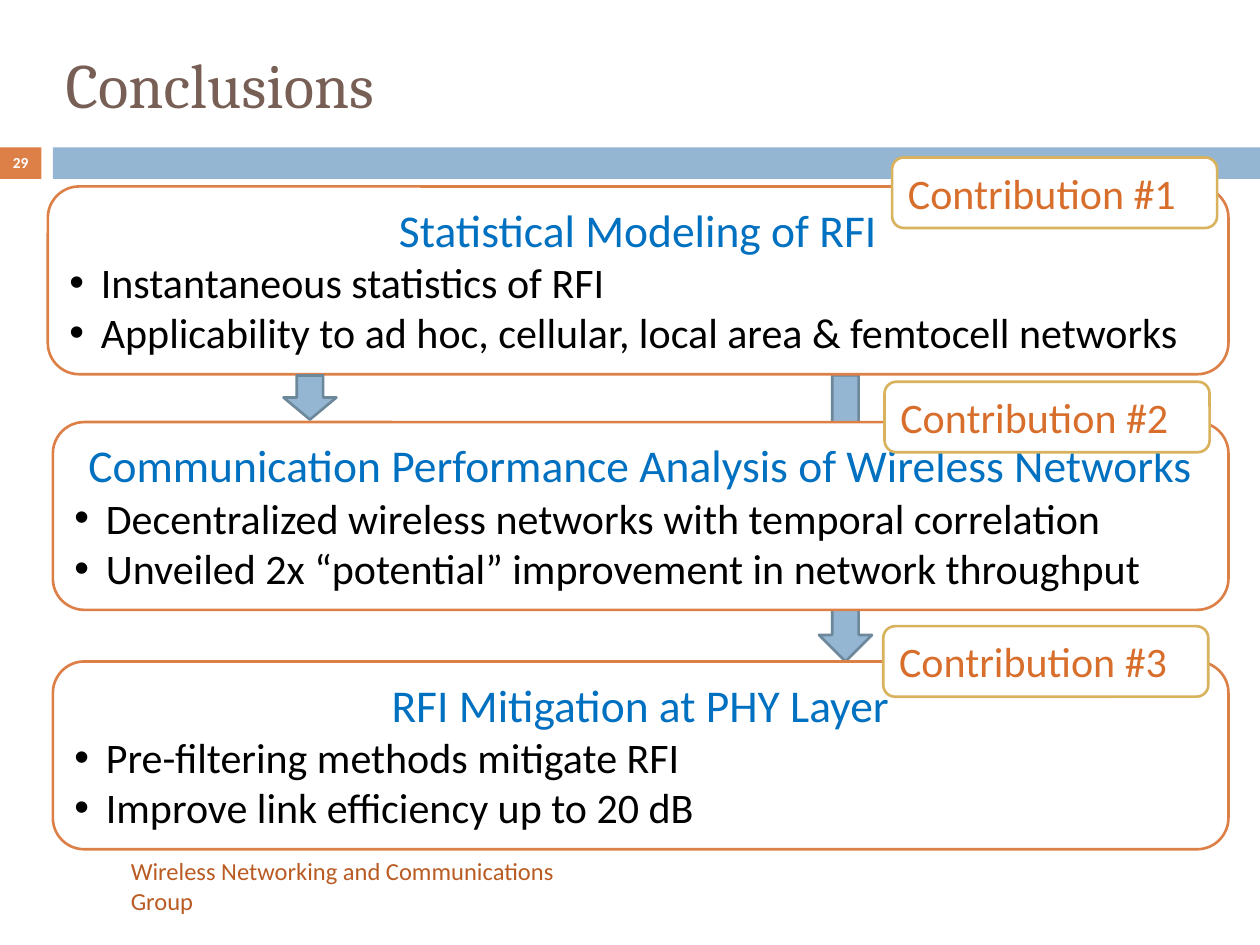
from typing import NamedTuple

from lxml.etree import SubElement
from pptx import Presentation
from pptx.dml.color import RGBColor
from pptx.enum.shapes import MSO_SHAPE
from pptx.enum.text import MSO_ANCHOR, MSO_AUTO_SIZE, PP_ALIGN
from pptx.oxml.ns import qn
from pptx.util import Pt

PX = 9144
BULLET_INDENT = 25

WHITE = RGBColor(0xFF, 0xFF, 0xFF)
BLACK = RGBColor(0x00, 0x00, 0x00)
ORANGE = RGBColor(0xDD, 0x80, 0x47)
DARK_ORANGE = RGBColor(0xB9, 0x5B, 0x22)
LABEL_ORANGE = RGBColor(0xD8, 0x6E, 0x2C)
GOLD = RGBColor(0xD8, 0xB2, 0x5C)
BLUE = RGBColor(0x94, 0xB6, 0xD2)
ARROW_EDGE = RGBColor(0x6D, 0x87, 0x9B)
HEADING_BLUE = RGBColor(0x00, 0x70, 0xC0)
BROWN = RGBColor(0x77, 0x5F, 0x55)


class Box(NamedTuple):
    left: int
    top: int
    width: int
    height: int

    def emu(self) -> list[int]:
        return [length * PX for length in self]


class Contribution(NamedTuple):
    panel: Box
    heading: str
    points: tuple[str, ...]
    label: str
    label_left: int
    label_top: int


CONTRIBUTIONS = (
    Contribution(
        Box(38, 148, 937, 149),
        "Statistical Modeling of RFI",
        (
            "Instantaneous statistics of RFI",
            "Applicability to ad hoc, cellular, local area & femtocell networks",
        ),
        "Contribution #1", 708, 125,
    ),
    Contribution(
        Box(42, 335, 933, 149),
        "Communication Performance Analysis of Wireless Networks",
        (
            "Decentralized wireless networks with temporal correlation",
            "Unveiled 2x “potential” improvement in network throughput",
        ),
        "Contribution #2", 702, 303,
    ),
    Contribution(
        Box(42, 525, 933, 149),
        "RFI Mitigation at PHY Layer",
        (
            "Pre-filtering methods mitigate RFI",
            "Improve link efficiency up to 20 dB",
        ),
        "Contribution #3", 701, 497,
    ),
)


def add_block(slide, preset: MSO_SHAPE, box: Box,
              fill: RGBColor | None = None, edge: RGBColor | None = None):
    block = slide.shapes.add_shape(preset, *box.emu())
    block.shadow.inherit = False
    if fill is None:
        block.fill.background()
    else:
        block.fill.solid()
        block.fill.fore_color.rgb = fill
    if edge is None:
        block.line.fill.background()
    else:
        block.line.color.rgb = edge
        block.line.width = Pt(1.5)
    return block


def write(paragraph, text: str, size: float, color: RGBColor,
          align: PP_ALIGN = PP_ALIGN.LEFT, face: str = "Calibri",
          bold: bool = False, bullet: bool = False) -> None:
    paragraph.text = text
    paragraph.alignment = align
    if bullet:
        properties = paragraph._p.get_or_add_pPr()
        properties.set("marL", str(BULLET_INDENT * PX))
        properties.set("indent", str(-BULLET_INDENT * PX))
        SubElement(properties, qn("a:buFont"), typeface="Arial")
        SubElement(properties, qn("a:buChar"), char="•")
    paragraph.font.name = face
    paragraph.font.size = Pt(size)
    paragraph.font.bold = bold
    paragraph.font.color.rgb = color


def add_panel(slide, contribution: Contribution) -> None:
    panel = add_block(slide, MSO_SHAPE.ROUNDED_RECTANGLE, contribution.panel, WHITE, ORANGE)
    frame = panel.text_frame
    frame.vertical_anchor = MSO_ANCHOR.TOP
    frame.auto_size = MSO_AUTO_SIZE.SHAPE_TO_FIT_TEXT
    write(frame.paragraphs[0], contribution.heading, 26, HEADING_BLUE, PP_ALIGN.CENTER)
    for point in contribution.points:
        write(frame.add_paragraph(), point, 24, BLACK, PP_ALIGN.JUSTIFY, bullet=True)


def add_label(slide, contribution: Contribution) -> None:
    box = Box(contribution.label_left, contribution.label_top, 258, 56)
    label = add_block(slide, MSO_SHAPE.ROUNDED_RECTANGLE, box, WHITE, GOLD)
    frame = label.text_frame
    frame.vertical_anchor = MSO_ANCHOR.TOP
    frame.auto_size = MSO_AUTO_SIZE.SHAPE_TO_FIT_TEXT
    write(frame.paragraphs[0], contribution.label, 24, LABEL_ORANGE)


def add_arrow(slide, box: Box) -> None:
    add_block(slide, MSO_SHAPE.DOWN_ARROW, box, BLUE, ARROW_EDGE)


def add_title(slide, text: str) -> None:
    title = slide.shapes.title
    title.left, title.top, title.width, title.height = Box(42, 25, 933, 83).emu()
    title.text_frame.vertical_anchor = MSO_ANCHOR.MIDDLE
    write(title.text_frame.paragraphs[0], text, 36, BROWN, face="Cambria")


def add_page_number(slide, text: str) -> None:
    frame = slide.shapes.add_textbox(*Box(0, 115, 33, 27).emu()).text_frame
    frame.word_wrap = True
    frame.margin_left = frame.margin_right = 0
    frame.vertical_anchor = MSO_ANCHOR.MIDDLE
    write(frame.paragraphs[0], text, 8.8, WHITE, PP_ALIGN.CENTER, bold=True)


def add_footer(slide, text: str) -> None:
    footer = add_block(slide, MSO_SHAPE.ROUNDED_RECTANGLE, Box(92, 683, 408, 40))
    footer.text_frame.vertical_anchor = MSO_ANCHOR.MIDDLE
    write(footer.text_frame.paragraphs[0], text, 14, DARK_ORANGE)


def main() -> None:
    presentation = Presentation()
    presentation.slide_width = 1000 * PX
    presentation.slide_height = 750 * PX
    slide = presentation.slides.add_slide(presentation.slide_layouts[5])

    add_block(slide, MSO_SHAPE.RECTANGLE, Box(0, 117, 33, 25), ORANGE)
    add_block(slide, MSO_SHAPE.RECTANGLE, Box(42, 117, 958, 25), BLUE)
    add_footer(slide, "Wireless Networking and Communications Group")
    add_title(slide, "Conclusions")
    add_page_number(slide, "29")

    add_arrow(slide, Box(650, 298, 42, 227))
    for contribution in CONTRIBUTIONS:
        add_panel(slide, contribution)
    add_arrow(slide, Box(225, 298, 42, 35))
    for contribution in CONTRIBUTIONS:
        add_label(slide, contribution)

    presentation.save("out.pptx")


if __name__ == "__main__":
    main()
